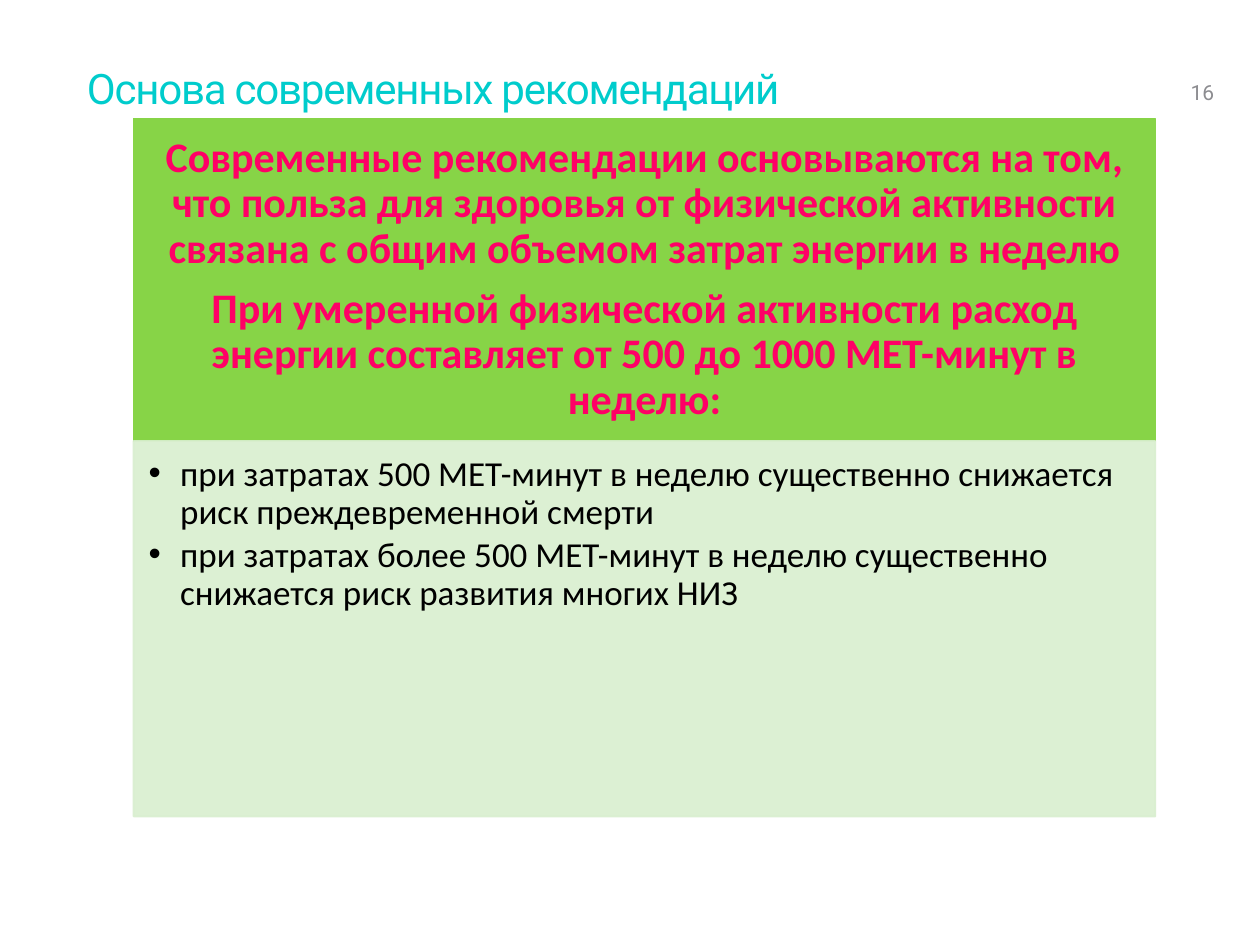
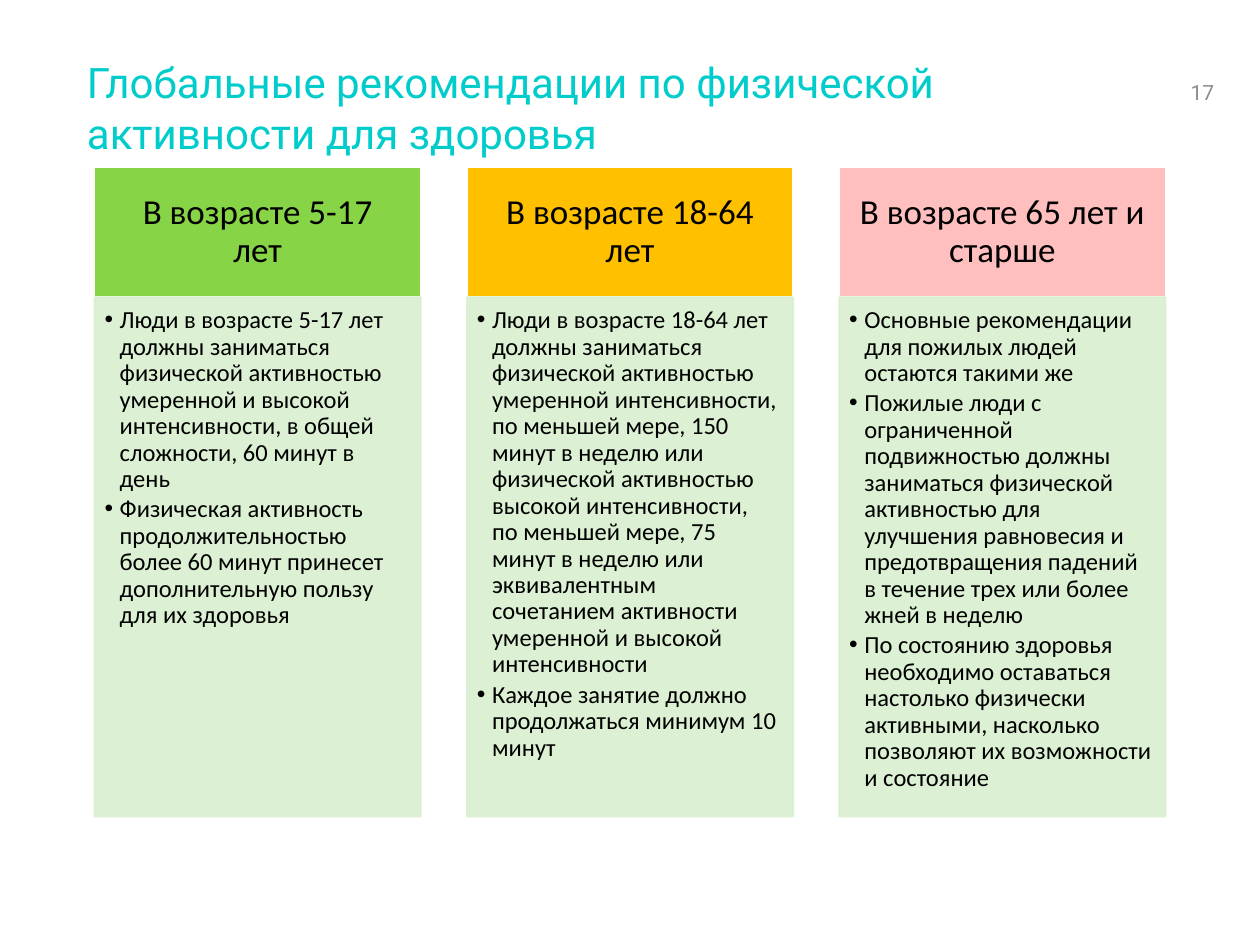
import pptx
import pptx.util
import pptx.dml.color
import pptx.enum.shapes
import pptx.enum.text
from lxml import etree
from pptx.oxml.ns import qn

Inches = pptx.util.Inches
Pt = pptx.util.Pt
ALIGN = pptx.enum.text.PP_ALIGN
ANCHOR = pptx.enum.text.MSO_ANCHOR

TITLE_ONLY_LAYOUT = 5
TURQUOISE, GREY, BLACK, WHITE = "00CCCC", "8C8C90", "000000", "FFFFFF"
GREEN, AMBER, ROSE, PALE_GREEN, PINK = "87D447", "FFC000", "FFBFBF", "D9EFCF", "FF0066"

TITLE_BOX = (0.69, 0.4, 8.62, 1.03)
NUMBER_BOX = (9.45, 0.4, 0.38, 0.47)
TITLE_FONT = {"size": Pt(24), "name": "Roboto", "bold": False}
NUMBER_FONT = {"size": Pt(12), "name": "Roboto"}
BODY_OPACITY = 90

BASIS_TITLE = "Основа современных рекомендаций"
BASIS_HEADING = [
    "Современные рекомендации основываются на том, что польза для здоровья от физической "
    "активности связана с общим объемом затрат энергии в неделю",
    "При умеренной физической активности расход энергии составляет от 500 до 1000 "
    "МЕТ-минут в неделю:",
]
BASIS_POINTS = [
    "при затратах 500 МЕТ-минут в неделю существенно снижается риск преждевременной смерти",
    "при затратах более 500 МЕТ-минут в неделю существенно снижается риск развития многих НИЗ",
]
AGE_TITLE = "Глобальные рекомендации по физической активности для здоровья"
AGE_GROUPS = [
    ("В возрасте 5-17 лет", GREEN, [
        "Люди в возрасте 5-17 лет должны заниматься физической активностью умеренной и "
        "высокой интенсивности, в общей сложности, 60 минут в день",
        "Физическая активность продолжительностью более 60 минут принесет дополнительную "
        "пользу для их здоровья",
    ]),
    ("В возрасте 18-64 лет", AMBER, [
        "Люди в возрасте 18-64 лет должны заниматься физической активностью умеренной "
        "интенсивности, по меньшей мере, 150 минут в неделю или физической активностью "
        "высокой интенсивности, по меньшей мере, 75 минут в неделю или эквивалентным "
        "сочетанием активности умеренной и высокой интенсивности",
        "Каждое занятие должно продолжаться минимум 10 минут",
    ]),
    ("В возрасте 65 лет и старше", ROSE, [
        "Основные рекомендации для пожилых людей остаются такими же",
        "Пожилые люди с ограниченной подвижностью должны заниматься физической активностью "
        "для улучшения равновесия и предотвращения падений в течение трех или более жней "
        "в неделю",
        "По состоянию здоровья необходимо оставаться настолько физически активными, "
        "насколько позволяют их возможности и состояние",
    ]),
]


def set_color(color_format, color):
    color_format.rgb = pptx.dml.color.RGBColor.from_string(color)


def set_attributes(target, values):
    for name, value in values.items():
        setattr(target, name, value)


def place(shape, box):
    names = ("left", "top", "width", "height")
    set_attributes(shape, dict(zip(names, map(Inches, box))))


def format_frame(frame, anchor, insets):
    """Insets run left, top, right, bottom, in inches."""
    names = ("margin_left", "margin_top", "margin_right", "margin_bottom")
    set_attributes(frame, dict(zip(names, map(Inches, insets))))
    set_attributes(frame, {"word_wrap": True, "vertical_anchor": anchor,
                           "auto_size": pptx.enum.text.MSO_AUTO_SIZE.NONE})


def format_font(font, values, color):
    set_attributes(font, values)
    set_color(font.color, color)


def add_bullet(paragraph, indent):
    properties = paragraph._p.get_or_add_pPr()
    properties.set("marL", str(Inches(indent)))
    properties.set("indent", str(-Inches(indent)))
    etree.SubElement(properties, qn("a:buFont"), typeface="Arial")
    etree.SubElement(properties, qn("a:buChar"), char="•")


def write_paragraphs(frame, texts, size, color, align, space_share, bold=False, indent=0):
    """Space after each paragraph is a share of the text size."""
    for index, text in enumerate(texts):
        paragraph = frame.add_paragraph() if index else frame.paragraphs[0]
        if indent:
            add_bullet(paragraph, indent)
        set_attributes(paragraph, {"alignment": align, "line_spacing": 0.9,
                                   "space_after": Pt(size * space_share)})
        run = paragraph.add_run()
        run.text = text
        format_font(run.font, {"size": Pt(size), "name": "Calibri", "bold": bold}, color)


def add_panel(slide, box, fill, line, opacity=100):
    panel = slide.shapes.add_shape(pptx.enum.shapes.MSO_SHAPE.RECTANGLE, *map(Inches, box))
    panel.shadow.inherit = False
    panel.fill.solid()
    set_color(panel.fill.fore_color, fill)
    set_color(panel.line.color, line)
    panel.line.width = Pt(1)
    if opacity < 100:
        for color in panel._element.spPr.iter(qn("a:srgbClr")):
            etree.SubElement(color, qn("a:alpha"), val=str(opacity * 1000))
    return panel


def add_heading(slide, box, texts, size, color, fill, line, insets, bold=False):
    frame = add_panel(slide, box, fill, line).text_frame
    format_frame(frame, ANCHOR.MIDDLE, insets)
    write_paragraphs(frame, texts, size, color, ALIGN.CENTER, 0.35, bold)


def add_points(slide, box, texts, size, insets, indent):
    frame = add_panel(slide, box, PALE_GREEN, PALE_GREEN, BODY_OPACITY).text_frame
    format_frame(frame, ANCHOR.TOP, insets)
    write_paragraphs(frame, texts, size, BLACK, ALIGN.LEFT, 0.15, indent=indent)


def add_titled_slide(presentation, title, number):
    slide = presentation.slides.add_slide(presentation.slide_layouts[TITLE_ONLY_LAYOUT])
    place(slide.shapes.title, TITLE_BOX)
    number_box = slide.shapes.add_textbox(*map(Inches, NUMBER_BOX))
    for shape, text, anchor, inset, font, color in (
        (slide.shapes.title, title, ANCHOR.TOP, 0.05, TITLE_FONT, TURQUOISE),
        (number_box, str(number), ANCHOR.BOTTOM, 0.04, NUMBER_FONT, GREY),
    ):
        frame = shape.text_frame
        format_frame(frame, anchor, (0, inset, 0, inset))
        frame.text = text
        frame.paragraphs[0].alignment = ALIGN.LEFT
        format_font(frame.paragraphs[0].runs[0].font, font, color)
    return slide


def build_basis_slide(presentation, box):
    slide = add_titled_slide(presentation, BASIS_TITLE, 16)
    title_paragraph = slide.shapes.title.text_frame.paragraphs[0]
    title_paragraph.line_spacing = Pt(32)
    title_paragraph.runs[0].font._element.set("spc", "-70")

    left, top, width, height = box
    heading_height = 2.56
    add_heading(slide, (left, top, width, heading_height), BASIS_HEADING, 24, PINK,
                GREEN, GREEN, (0.19, 0.11, 0.19, 0.11), bold=True)
    add_points(slide, (left, top + heading_height, width, height - heading_height),
               BASIS_POINTS, 20, (0.12, 0.12, 0.16, 0.17), 0.25)


def build_age_slide(presentation, box):
    slide = add_titled_slide(presentation, AGE_TITLE, 17)
    left, top, width, height = box
    column_width, heading_height = 2.59, 1.03
    pitch = (width - column_width) / (len(AGE_GROUPS) - 1)
    for index, (heading, fill, points) in enumerate(AGE_GROUPS):
        column_left = left + index * pitch
        add_heading(slide, (column_left, top, column_width, heading_height), [heading],
                    20, BLACK, fill, WHITE, (0.16, 0.09, 0.16, 0.09))
        add_points(slide, (column_left, top + heading_height, column_width,
                           height - heading_height),
                   points, 14, (0.08, 0.08, 0.11, 0.12), 0.12)


def main():
    presentation = pptx.Presentation()
    presentation.slide_width = Inches(10)
    presentation.slide_height = Inches(7.5)
    build_basis_slide(presentation, (1.06, 0.94, 8.11, 5.54))
    build_age_slide(presentation, (0.75, 1.33, 8.5, 5.15))
    presentation.save("out.pptx")


if __name__ == "__main__":
    main()
